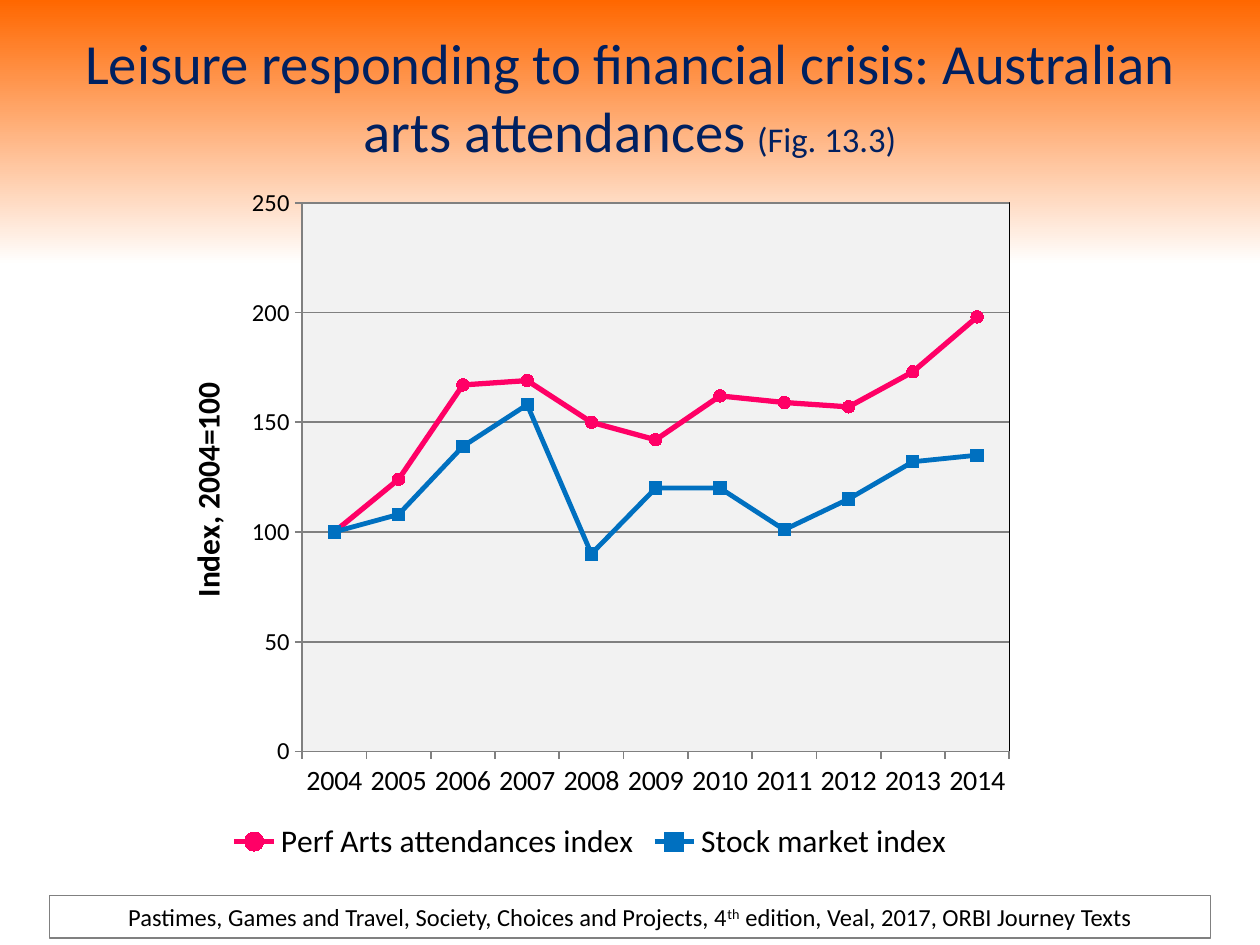
from copy import deepcopy

from lxml.etree import SubElement
from pptx import Presentation
from pptx.chart.data import CategoryChartData
from pptx.dml.color import RGBColor
from pptx.enum.chart import (XL_CHART_TYPE, XL_LEGEND_POSITION,
                             XL_MARKER_STYLE, XL_TICK_MARK)
from pptx.enum.shapes import MSO_SHAPE
from pptx.enum.text import MSO_ANCHOR, PP_ALIGN
from pptx.oxml.ns import qn
from pptx.util import Cm, Pt

FONT = "Calibri"
BLACK, GREY, NAVY = "000000", "808080", "002060"
YEARS = [str(year) for year in range(2004, 2015)]
SERIES = [
    ("Perf Arts attendances index", "FF0066", 3, XL_MARKER_STYLE.CIRCLE,
     [100, 124, 167, 169, 150, 142, 162, 159, 157, 173, 198]),
    ("Stock market index", "0070C0", 2.75, XL_MARKER_STYLE.SQUARE,
     [100, 108, 139, 158, 90, 120, 120, 101, 115, 132, 135]),
]


def color(value):
    """Return the colour for a hex string."""
    return RGBColor.from_string(value)


def set_line(line, value, width):
    """Give a line a solid colour and a width in points."""
    line.color.rgb = color(value)
    line.width = Pt(width)


def set_font(font, size, value=BLACK, bold=False):
    """Set typeface, size, colour and weight of a font."""
    font.name, font.size, font.bold = FONT, Pt(size), bold
    font.color.rgb = color(value)


def add_text(para, text, size=14, value=BLACK, bold=False, baseline=0):
    """Append a formatted span to a paragraph."""
    span = para.add_run()
    span.text = text
    set_font(span.font, size, value, bold)
    if baseline:
        span.font._element.set("baseline", str(baseline * 1000))


def centred_paragraph(shape):
    """Prepare a wrapped, middle-anchored shape and return its paragraph."""
    frame = shape.text_frame
    frame.word_wrap = True
    frame.vertical_anchor = MSO_ANCHOR.MIDDLE
    para = frame.paragraphs[0]
    para.alignment = PP_ALIGN.CENTER
    return para


def set_layout(element, inner=False, **fractions):
    """Place a chart part at fractions of the chart box."""
    for old in element.findall(qn("c:layout")):
        element.remove(old)
    layout = SubElement(element, qn("c:layout"))
    manual = SubElement(layout, qn("c:manualLayout"))
    if inner:
        SubElement(manual, qn("c:layoutTarget")).set("val", "inner")
    for name in ("xMode", "yMode"):
        SubElement(manual, qn(f"c:{name}")).set("val", "edge")
    for name, value in fractions.items():
        SubElement(manual, qn(f"c:{name}")).set("val", str(value))
    element.remove(layout)
    leaders = [child for child in element
               if child.tag in (qn("c:tx"), qn("c:legendPos"))]
    element.insert(len(leaders), layout)


def paint_background(page):
    """Fade the page from orange to white."""
    fill = page.background.fill
    fill.gradient()
    fill.gradient_angle = 270
    stops = fill.gradient_stops
    for stop, value, position in zip(stops, ("FF6700", "FFFFFF"), (0, 0.28)):
        stop.color.rgb = color(value)
        stop.position = position
    stop_list = next(page.element.iter(qn("a:gsLst")))
    stop_list.append(deepcopy(stop_list[-1]))
    fill.gradient_stops[2].position = 1


def add_title(page, left, top, width, height):
    """Write the heading with its figure number."""
    box = page.shapes.add_textbox(left, top, width, height)
    para = centred_paragraph(box)
    add_text(para, "Leisure responding to financial crisis: "
             "Australian arts attendances", size=32.4, value=NAVY)
    add_text(para, " ", size=28.8, value=NAVY)
    add_text(para, "(Fig. 13.3)", size=19.8, value=NAVY)


def format_axes(chart):
    """Format both axes, the gridlines and the value title."""
    for axis, size in ((chart.category_axis, 16), (chart.value_axis, 14)):
        set_font(axis.tick_labels.font, size)
        set_line(axis.format.line, GREY, 1)
        axis.major_tick_mark = XL_TICK_MARK.OUTSIDE
        axis.minor_tick_mark = XL_TICK_MARK.NONE
    axis = chart.value_axis
    axis.minimum_scale, axis.maximum_scale, axis.major_unit = 0, 250, 50
    axis.tick_labels.number_format = "0"
    axis.tick_labels.number_format_is_linked = False
    axis.has_major_gridlines = True
    set_line(axis.major_gridlines.format.line, GREY, 1)
    title = axis.axis_title
    add_text(title.text_frame.paragraphs[0], "Index, 2004=100",
             size=18, bold=True)
    title.text_frame._txBody.bodyPr.set("rot", "-5400000")
    title.text_frame._txBody.bodyPr.set("vert", "horz")
    set_layout(title._element, x=0.03, y=0.29)


def format_plot_area(chart):
    """Fill, outline and place the plot area."""
    area = chart.plots[0]._element.getparent()
    set_layout(area, inner=True, x=0.17, y=0.04, w=0.81, h=0.79)
    shape = SubElement(area, qn("c:spPr"))
    fill = SubElement(shape, qn("a:solidFill"))
    SubElement(fill, qn("a:srgbClr")).set("val", "F2F2F2")
    line = SubElement(shape, qn("a:ln"), w=str(Pt(0.75)))
    fill = SubElement(line, qn("a:solidFill"))
    SubElement(fill, qn("a:srgbClr")).set("val", BLACK)


def add_index_chart(page, left, top, width, height):
    """Chart both indexes by year."""
    data = CategoryChartData()
    data.categories = YEARS
    for name, _, _, _, values in SERIES:
        data.add_series(name, values)
    chart = page.shapes.add_chart(XL_CHART_TYPE.LINE_MARKERS, left, top,
                                  width, height, data).chart
    set_font(chart.font, 10)
    chart.has_title = False
    chart.plots[0].vary_by_categories = False
    for series, (_, value, weight, style, _) in zip(chart.series, SERIES):
        series.smooth = False
        set_line(series.format.line, value, weight)
        marker = series.marker
        marker.style, marker.size = style, 7
        marker.format.fill.solid()
        marker.format.fill.fore_color.rgb = color(value)
        set_line(marker.format.line, value, 0.75)
    format_axes(chart)
    format_plot_area(chart)
    chart.has_legend = True
    legend = chart.legend
    legend.position = XL_LEGEND_POSITION.BOTTOM
    legend.include_in_layout = False
    set_font(legend.font, 18)
    set_layout(legend._element, x=0.08, y=0.93, w=0.84, h=0.07)


def add_footer(page, left, top, width, height):
    """Credit the book in an outlined strip."""
    strip = page.shapes.add_shape(MSO_SHAPE.RECTANGLE, left, top, width, height)
    strip.shadow.inherit = False
    strip.fill.background()
    set_line(strip.line, GREY, 0.75)
    para = centred_paragraph(strip)
    add_text(para, "Pastimes, Games and Travel, Society, Choices and Projects, 4")
    add_text(para, "th", baseline=30)
    add_text(para, " edition, Veal, 2017, ORBI Journey Texts")


def main():
    """Build and save the deck."""
    deck = Presentation()
    deck.slide_width, deck.slide_height = Cm(25.4), Cm(19.05)
    page = deck.slides.add_slide(deck.slide_layouts[6])
    paint_background(page)
    add_title(page, Cm(1.27), Cm(0.76), Cm(22.86), Cm(2.36))
    add_index_chart(page, Cm(3.1), Cm(3.53), Cm(17.6), Cm(14))
    add_footer(page, Cm(1), Cm(18.05), Cm(23.4), Cm(0.86))
    deck.save("out.pptx")


if __name__ == "__main__":
    main()
